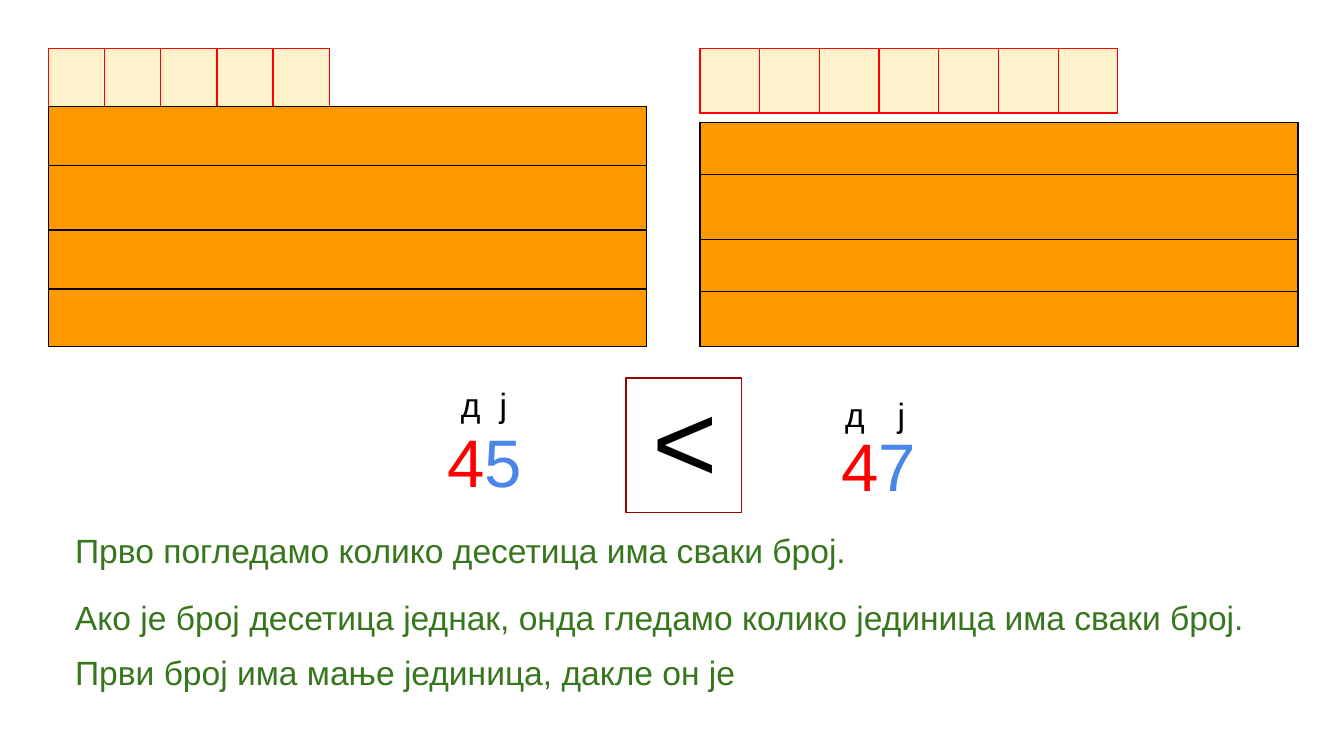
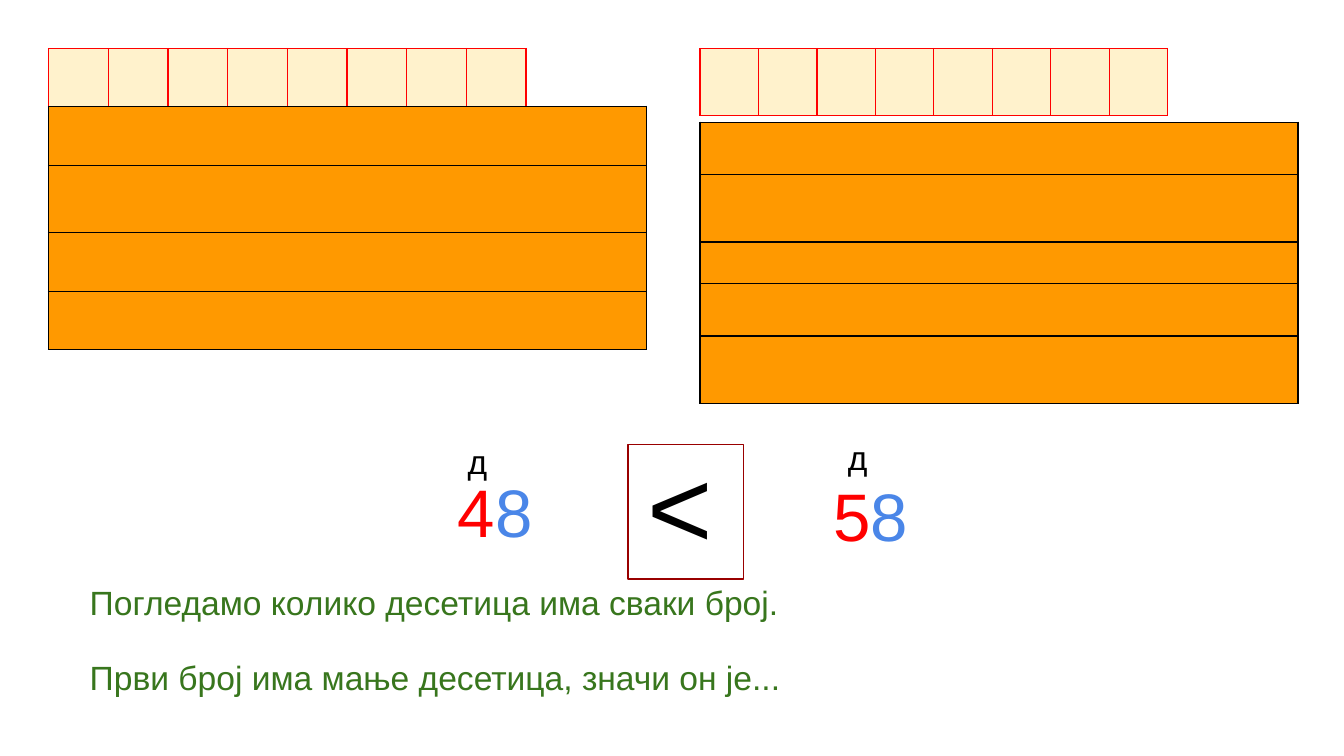
from dataclasses import dataclass
from typing import Any

from lxml.etree import SubElement as add_xml
from pptx import Presentation
from pptx.dml.color import RGBColor
from pptx.enum.shapes import MSO_SHAPE
from pptx.enum.text import MSO_ANCHOR
from pptx.oxml.ns import qn
from pptx.util import Pt

# Shared look
FONT = "Arial"
BLACK, RED, BLUE, GREEN = "000000", "FF0000", "4A86E8", "38761D"
ORANGE, CREAM, MAROON = "FF9900", "FFF2CC", "990000"
LINE = Pt(0.75)
INSET = Pt(7.2)
LABEL_SIZE, DIGIT_SIZE, SIGN_SIZE = 18, 36, 60
LEFT_X, RIGHT_X = 26, 375
UNITS_TOP = 26
TEN_WIDTH, TEN_HEIGHT = 320.4, 30
LEFT_TENS = (151.2, 120.2, 56.9, 88.6)

INSETS = {f"margin_{side}": INSET for side in ("left", "top", "right", "bottom")}
FRAME_FORMAT = {"word_wrap": True, "vertical_anchor": MSO_ANCHOR.TOP, **INSETS}
PLAIN_TABLE = {"first_row": False, "horz_banding": False}


@dataclass(frozen=True)
class Blocks:
    """Tens and units of one number; tens tops run from back to front."""
    x: float
    unit_count: int
    unit_width: float
    unit_height: float
    ten_tops: tuple[float, ...]


@dataclass(frozen=True)
class Words:
    x: float
    y: float
    width: float
    height: float
    runs: tuple[tuple[str, str], ...]
    size: float = LABEL_SIZE


@dataclass(frozen=True)
class Comparison:
    blocks: tuple[Blocks, ...]
    sign_frame: tuple[float, float]
    words: tuple[Words, ...]


def label(x: float, y: float, text: str, width: float = 33) -> Words:
    return Words(x, y, width, 31, ((text, BLACK),))


def number(x: float, y: float, tens: str, units: str, indent: str = "") -> Words:
    lead = ((indent, BLACK),) if indent else ()
    return Words(x, y, 100, 58, lead + ((tens, RED), (units, BLUE)), DIGIT_SIZE)


def sentence(x: float, y: float, text: str, width: float = 600) -> Words:
    return Words(x, y, width, 45, ((text, GREEN),))


def sign(x: float, y: float) -> Words:
    return Words(x, y, 46.8, 94.3, (("<", BLACK),), SIGN_SIZE)


COMPARISONS = (
    Comparison(
        blocks=(
            Blocks(LEFT_X, 5, 30.1, 30.2, LEFT_TENS),
            Blocks(RIGHT_X, 7, 32, 31, (151.2, 121.7, 65.5, 93.6)),
        ),
        sign_frame=(335.3, 202.5),
        words=(
            number(222.5, 218.2, "4", "5", indent=" "),
            number(443.5, 220.3, "4", "7"),
            label(239.8, 198.7, "д"),
            label(260.6, 198.7, "ј", 27.4),
            label(445.7, 203.8, "д"),
            label(473.8, 203.8, "ј", 22.3),
            sign(342.7, 191.5),
            sentence(33.1, 276.5, "Прво погледамо колико десетица има сваки број."),
            sentence(33.1, 312.5, "Ако је број десетица једнак, онда гледамо "
                                  "колико јединица има сваки број.", 662.4),
            sentence(33.1, 342, "Први број има мање јединица, дакле он је"),
        ),
    ),
    Comparison(
        blocks=(
            Blocks(LEFT_X, 8, 32, 31, LEFT_TENS),
            Blocks(RIGHT_X, 8, 31.35, 31, (121.7, 65.5, 93.6, 151.9, 180)),
        ),
        sign_frame=(336.5, 238.2),
        words=(
            number(228.2, 244.8, "4", "8", indent=" "),
            number(439.2, 247, "5", "8"),
            label(243.4, 229, "д"),
            label(447.1, 226.8, "д"),
            sign(339.8, 226.8),
            sentence(41, 304.6, "Погледамо колико десетица има сваки број."),
            sentence(41, 344.9, "Први број има мање десетица, значи он је..."),
        ),
    ),
)


def color(value: str) -> RGBColor:
    return RGBColor.from_string(value)


def apply(target: Any, values: dict[str, Any]) -> None:
    for name, value in values.items():
        setattr(target, name, value)


def style_cell(cell: Any, fill: str, border: str) -> None:
    apply(cell, INSETS)
    # Borders go before the fill in the cell properties
    props = cell._tc.get_or_add_tcPr()
    for side in ("lnL", "lnR", "lnT", "lnB"):
        edge = add_xml(props, qn(f"a:{side}"), w=str(LINE))
        solid = add_xml(edge, qn("a:solidFill"))
        add_xml(solid, qn("a:srgbClr"), val=border)
    cell.fill.solid()
    cell.fill.fore_color.rgb = color(fill)
    # Empty cells take their line height from the end mark
    end_mark = add_xml(cell.text_frame.paragraphs[0]._p, qn("a:endParaRPr"),
                       sz=str(LABEL_SIZE * 100))
    add_xml(end_mark, qn("a:latin"), typeface=FONT)


def draw_strip(slide: Any, x: float, y: float, count: int, width: float,
               height: float, fill: str, border: str) -> None:
    strip = slide.shapes.add_table(
        1, count, Pt(x), Pt(y), Pt(width * count), Pt(height)).table
    apply(strip, PLAIN_TABLE)
    for cell in strip.iter_cells():
        style_cell(cell, fill, border)


def draw_blocks(slide: Any, blocks: Blocks) -> None:
    draw_strip(slide, blocks.x, UNITS_TOP, blocks.unit_count, blocks.unit_width,
               blocks.unit_height, CREAM, RED)
    for top in blocks.ten_tops:
        draw_strip(slide, blocks.x, top, 1, TEN_WIDTH, TEN_HEIGHT, ORANGE, BLACK)


def draw_sign_frame(slide: Any, x: float, y: float) -> None:
    frame = slide.shapes.add_shape(
        MSO_SHAPE.RECTANGLE, Pt(x), Pt(y), Pt(61.9), Pt(72))
    frame.shadow.inherit = False
    frame.fill.background()
    frame.line.color.rgb = color(MAROON)
    frame.line.width = LINE


def draw_words(slide: Any, words: Words) -> None:
    frame = slide.shapes.add_textbox(
        Pt(words.x), Pt(words.y), Pt(words.width), Pt(words.height)).text_frame
    apply(frame, FRAME_FORMAT)
    for text, ink in words.runs:
        run = frame.paragraphs[0].add_run()
        run.text = text
        apply(run.font, {"name": FONT, "size": Pt(words.size)})
        run.font.color.rgb = color(ink)


def main() -> None:
    deck = Presentation()
    apply(deck, {"slide_width": Pt(720), "slide_height": Pt(405)})
    for comparison in COMPARISONS:
        slide = deck.slides.add_slide(deck.slide_layouts[6])
        for blocks in comparison.blocks:
            draw_blocks(slide, blocks)
        draw_sign_frame(slide, *comparison.sign_frame)
        for words in comparison.words:
            draw_words(slide, words)
    deck.save("out.pptx")


if __name__ == "__main__":
    main()
